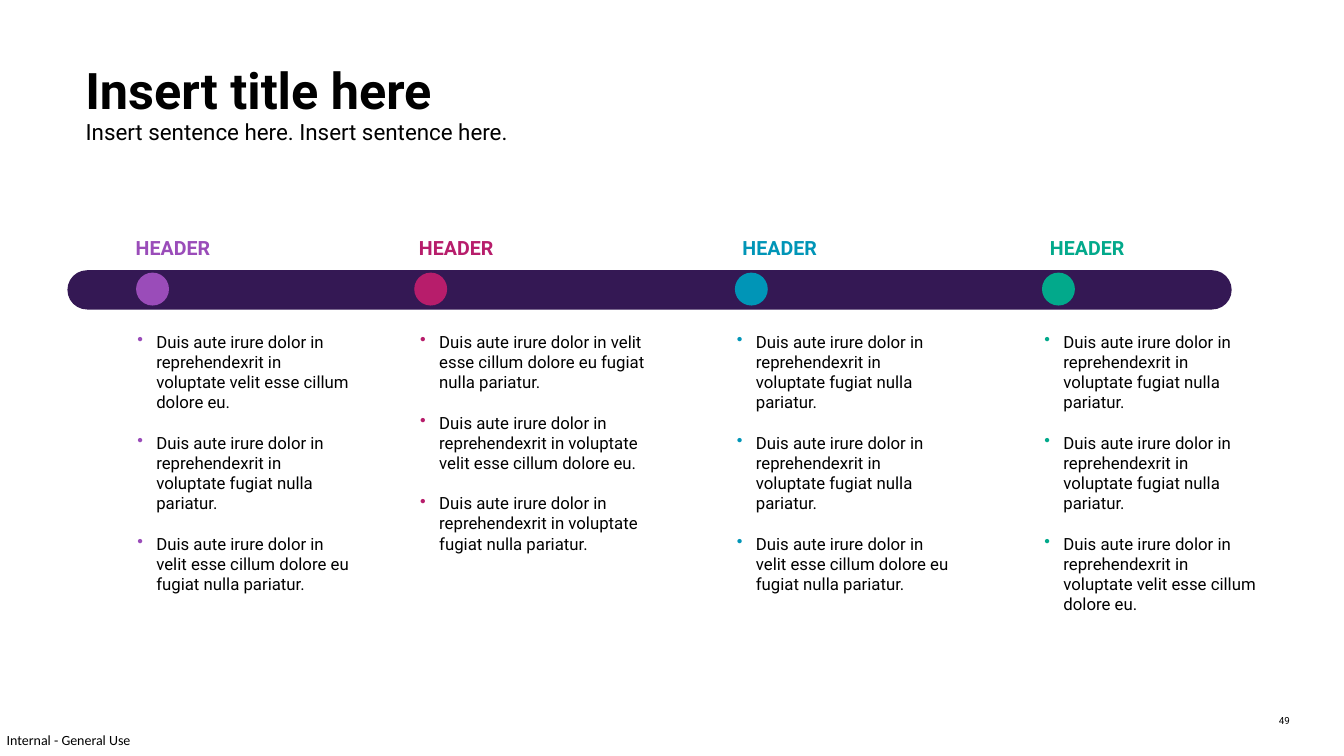
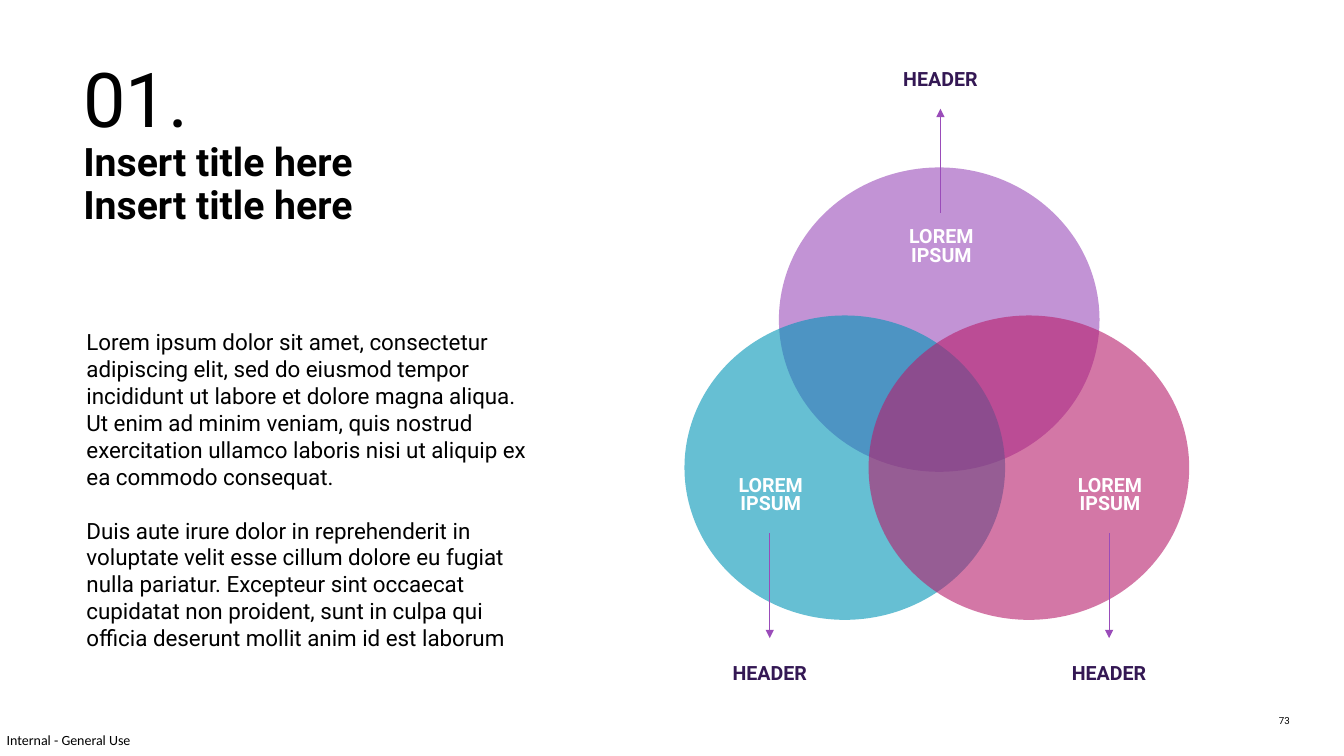
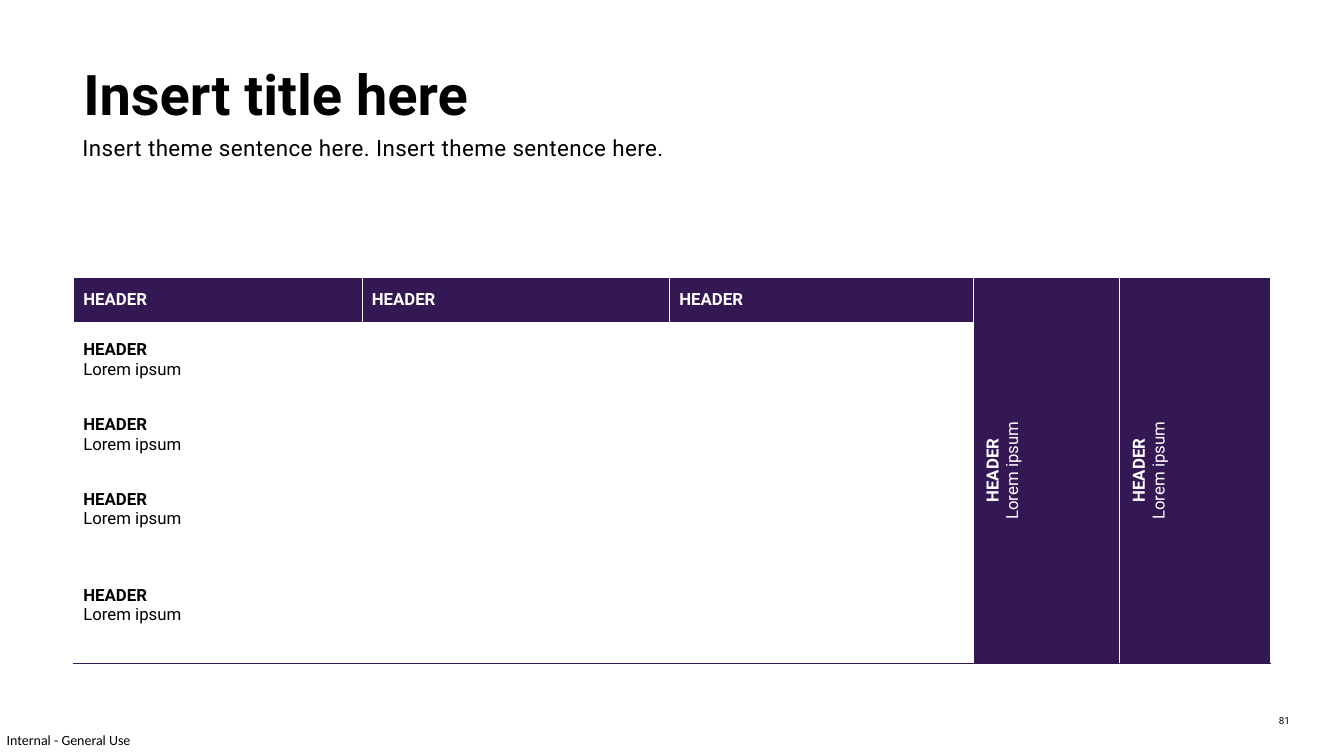
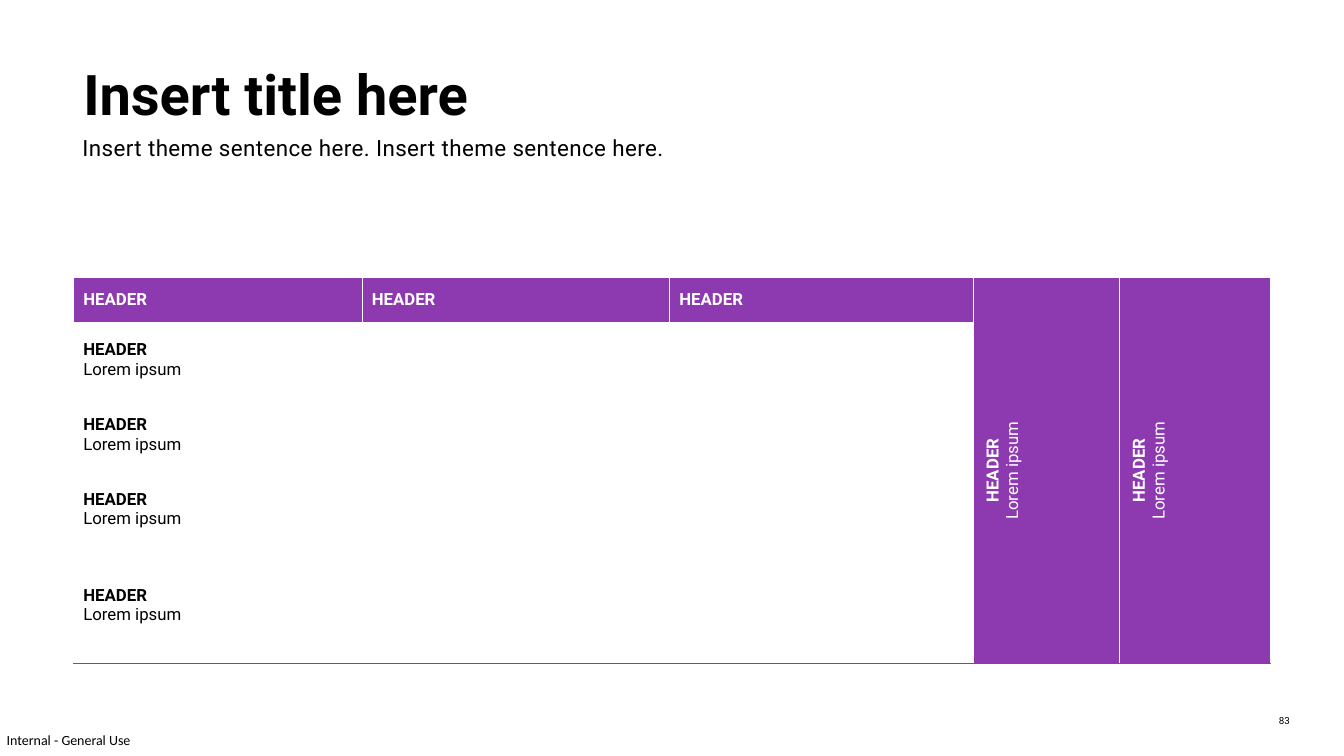
"""Build four template slides: a timeline, a Venn diagram and two tables."""
from lxml.etree import SubElement
from pptx import Presentation
from pptx.dml.color import RGBColor
from pptx.enum.shapes import MSO_CONNECTOR, MSO_SHAPE
from pptx.enum.text import MSO_ANCHOR, PP_ALIGN
from pptx.oxml.ns import qn
from pptx.util import Cm, Pt

BLACK, WHITE, INDIGO = "000000", "FFFFFF", "341854"
PURPLE, MAGENTA, TEAL, GREEN = "9A4CB9", "B71D6B", "0095B7", "02A98B"
VIOLET = "8D39B0"


def rgb(value):
    return RGBColor.from_string(value)


def write(p, text, size=12, color=BLACK, bold=False, font="Roboto", align=None,
          line=None, before=0, bullet=None, spc=None):
    if align:
        p.alignment = align
    if line:
        p.line_spacing = line
    if before:
        p.space_before = Pt(before)
    if bullet:
        pPr = p._p.get_or_add_pPr()
        pPr.set("marL", str(Cm(0.48)))
        pPr.set("indent", str(-Cm(0.48)))
        SubElement(SubElement(pPr, qn("a:buClr")), qn("a:srgbClr"), val=bullet)
        SubElement(pPr, qn("a:buChar"), char="•")
    r = p.add_run()
    r.text = text
    r.font.name, r.font.size, r.font.bold = font, Pt(size), bold
    r.font.color.rgb = rgb(color)
    if spc:
        r._r.get_or_add_rPr().set("spc", str(spc))


class Deck:
    def __init__(self):
        self.prs = Presentation()
        self.prs.slide_width, self.prs.slide_height = Cm(33.87), Cm(19.05)

    def slide(self, number):
        self.s = self.prs.slides.add_slide(self.prs.slide_layouts[6])
        self.text(0.17, 18.44, 3.5, 0.43, "Internal - General Use", inset=0,
                  size=10, font="Calibri")
        self.text(31.98, 17.88, 1.12, 0.64, number, size=7)

    def text(self, x, y, w, h, *lines, inset=None, gap=0, **fmt):
        tf = self.s.shapes.add_textbox(Cm(x), Cm(y), Cm(w), Cm(h)).text_frame
        tf.word_wrap = True
        if inset is not None:
            tf.margin_left = tf.margin_right = Cm(inset)
            tf.margin_top = tf.margin_bottom = Cm(inset)
        for i, line in enumerate(lines):
            p = tf.add_paragraph() if i else tf.paragraphs[0]
            write(p, line, before=gap if i else 0, **fmt)

    def title(self, x, y, w, h, *lines, size=36, bold=True):
        self.text(x, y, w, h, *lines, size=size, bold=bold, line=0.9)

    def body(self, x, y, w, h, *lines, **fmt):
        self.text(x, y, w, h, *lines, inset=0.33, size=16, gap=19.2, **fmt)

    def label(self, x, y, w, h, text, color, align=None):
        self.text(x, y, w, h, text, size=14, bold=True, color=color,
                  align=align, line=Pt(13.3))

    def shape(self, kind, x, y, w, h, color, alpha=None):
        sp = self.s.shapes.add_shape(kind, Cm(x), Cm(y), Cm(w), Cm(h))
        sp.shadow.inherit = False
        sp.fill.solid()
        sp.fill.fore_color.rgb = rgb(color)
        sp.line.fill.background()
        if alpha:
            fill = sp._element.spPr.find(qn("a:solidFill"))
            SubElement(fill[0], qn("a:alpha"), val=str(alpha * 1000))
        return sp

    def arrow(self, x, y1, y2, color):
        cn = self.s.shapes.add_connector(MSO_CONNECTOR.STRAIGHT, Cm(x), Cm(y1), Cm(x), Cm(y2))
        cn.line.color.rgb = rgb(color)
        cn.line.width = Pt(0.75)
        SubElement(cn.line._get_or_add_ln(), qn("a:tailEnd"), type="triangle")
        SubElement(cn._element.spPr, qn("a:effectLst"))

    def cell(self, cell, lines, color, fill=None, borders=(), vertical=False):
        tcPr = cell._tc.get_or_add_tcPr()
        for side, border in borders:
            ln = SubElement(tcPr, qn("a:" + side), w=str(Pt(1)))
            SubElement(SubElement(ln, qn("a:solidFill")), qn("a:srgbClr"), val=border)
        if fill:
            cell.fill.solid()
            cell.fill.fore_color.rgb = rgb(fill)
        else:
            cell.fill.background()
        cell.vertical_anchor = MSO_ANCHOR.MIDDLE
        cell.margin_left = cell.margin_right = Cm(0.24)
        cell.margin_top = cell.margin_bottom = Cm(0.24)
        if vertical:
            tcPr.set("vert", "vert270")
        tf = cell.text_frame
        for i, line in enumerate(lines):
            p = tf.add_paragraph() if i else tf.paragraphs[0]
            write(p, line, color=color, bold=i == 0,
                  align=PP_ALIGN.CENTER if vertical else None)

    def table(self, x, y, widths, heights, accent):
        rows, cols = len(heights), len(widths)
        table = self.s.shapes.add_table(rows, cols, Cm(x), Cm(y), Cm(sum(widths)),
                                        Cm(sum(heights))).table
        table.first_row = table.horz_banding = False
        for col, width in zip(table.columns, widths):
            col.width = Cm(width)
        for row, height in zip(table.rows, heights):
            row.height = Cm(height)
        for c in (3, 4):
            table.cell(0, c).merge(table.cell(rows - 1, c))
        for r in range(1, rows):
            table.cell(r, 0).merge(table.cell(r, 2))
        pair = ("HEADER", "Lorem ipsum")
        for r in range(rows):
            for c in range(cols):
                cell, side = table.cell(r, c), c > 2
                filled = side or r == 0
                borders = [("lnL", WHITE), ("lnR", WHITE)] if filled else []
                if r == rows - 1 or (r and not side) or (side and r == 0):
                    borders.append(("lnB", accent))
                lines = () if cell.is_spanned else pair if side or r else pair[:1]
                self.cell(cell, lines, WHITE if filled else BLACK,
                          accent if filled else None, borders, side)


def timeline(deck):
    start = "Duis aute irure dolor in "
    velit = start + "reprehendexrit in voluptate velit esse cillum dolore eu."
    fugiat = start + "reprehendexrit in voluptate fugiat nulla pariatur."
    cillum = start + "velit esse cillum dolore eu fugiat nulla pariatur."
    columns = [
        (PURPLE, 3.12, 3.43, 3.33, 5.69, (velit, fugiat, cillum)),
        (MAGENTA, 10.26, 10.44, 10.46, 5.97, (cillum, velit, fugiat)),
        (TEAL, 18.41, 18.52, 18.44, 5.69, (fugiat, fugiat, cillum)),
        (GREEN, 26.16, 26.26, 26.19, 5.69, (fugiat, fugiat, velit)),
    ]
    deck.slide("49")
    bar = deck.shape(MSO_SHAPE.ROUNDED_RECTANGLE, 1.7, 6.81, 29.34, 0.99, INDIGO)
    bar.adjustments[0] = 0.5
    deck.body(1.83, 2.64, 25.76, 1.37, "Insert sentence here. Insert sentence here.")
    deck.title(1.9, 1.55, 28.22, 1.37, "Insert title here")
    for color, header_x, dot_x, list_x, width, items in columns:
        deck.shape(MSO_SHAPE.OVAL, dot_x, 6.87, 0.83, 0.83, color)
        deck.text(list_x, 8.23, width, 6.4, *items, inset=0.13, gap=14.4, bullet=color)
        deck.label(header_x + 0.05, 5.94, 2.44, 0.74, "HEADER", color)


def venn(deck):
    circles = [
        (PURPLE, 19.63, 4.22, 23.7, 5.64, 1.68, 5.36, 2.74),
        (TEAL, 17.25, 7.95, 19.4, 11.91, 16.66, 13.44, 16.08),
        (MAGENTA, 21.89, 7.95, 27.95, 11.91, 16.66, 13.44, 16.08),
    ]
    deck.slide("73")
    deck.body(
        1.85, 7.95, 11.84, 8.89,
        "Lorem ipsum dolor sit amet, consectetur adipiscing elit, sed do eiusmod tempor "
        "incididunt ut labore et dolore magna aliqua. Ut enim ad minim veniam, quis nostrud "
        "exercitation ullamco laboris nisi ut aliquip ex ea commodo consequat.",
        "Duis aute irure dolor in reprehenderit in voluptate velit esse cillum dolore eu "
        "fugiat nulla pariatur. Excepteur sint occaecat cupidatat non proident, sunt in "
        "culpa qui officia deserunt mollit anim id est laborum")
    deck.title(1.85, 3.48, 10.87, 3.76, "Insert title here", "Insert title here", size=28)
    deck.title(1.85, 1.45, 4.93, 2.62, "01.", size=54, bold=False)
    for color, x, y, center, label_y, header_y, y1, y2 in circles:
        deck.shape(MSO_SHAPE.OVAL, x, y, 8.08, 7.67, color, alpha=60)
        deck.label(center - 1.6, label_y, 3.25, 1.17, "LOREM IPSUM", WHITE, PP_ALIGN.CENTER)
        deck.label(center - 2.2, header_y, 4.4, 0.75, "HEADER", INDIGO, PP_ALIGN.CENTER)
        deck.arrow(center, y1, y2, PURPLE)


def table_slide(deck, number, accent):
    deck.slide(number)
    deck.table(1.86, 6.99, [7.27, 7.75, 7.65, 3.69, 3.79], [1.14] + [1.88] * 4, accent)
    deck.title(1.85, 1.57, 13.97, 1.32, "Insert title here", size=40)
    deck.body(1.75, 3.05, 28.12, 1.37,
              "Insert theme sentence here. Insert theme sentence here.", spc=30)


def main():
    deck = Deck()
    timeline(deck)
    venn(deck)
    table_slide(deck, "81", INDIGO)
    table_slide(deck, "83", VIOLET)
    deck.prs.save("out.pptx")


if __name__ == "__main__":
    main()
